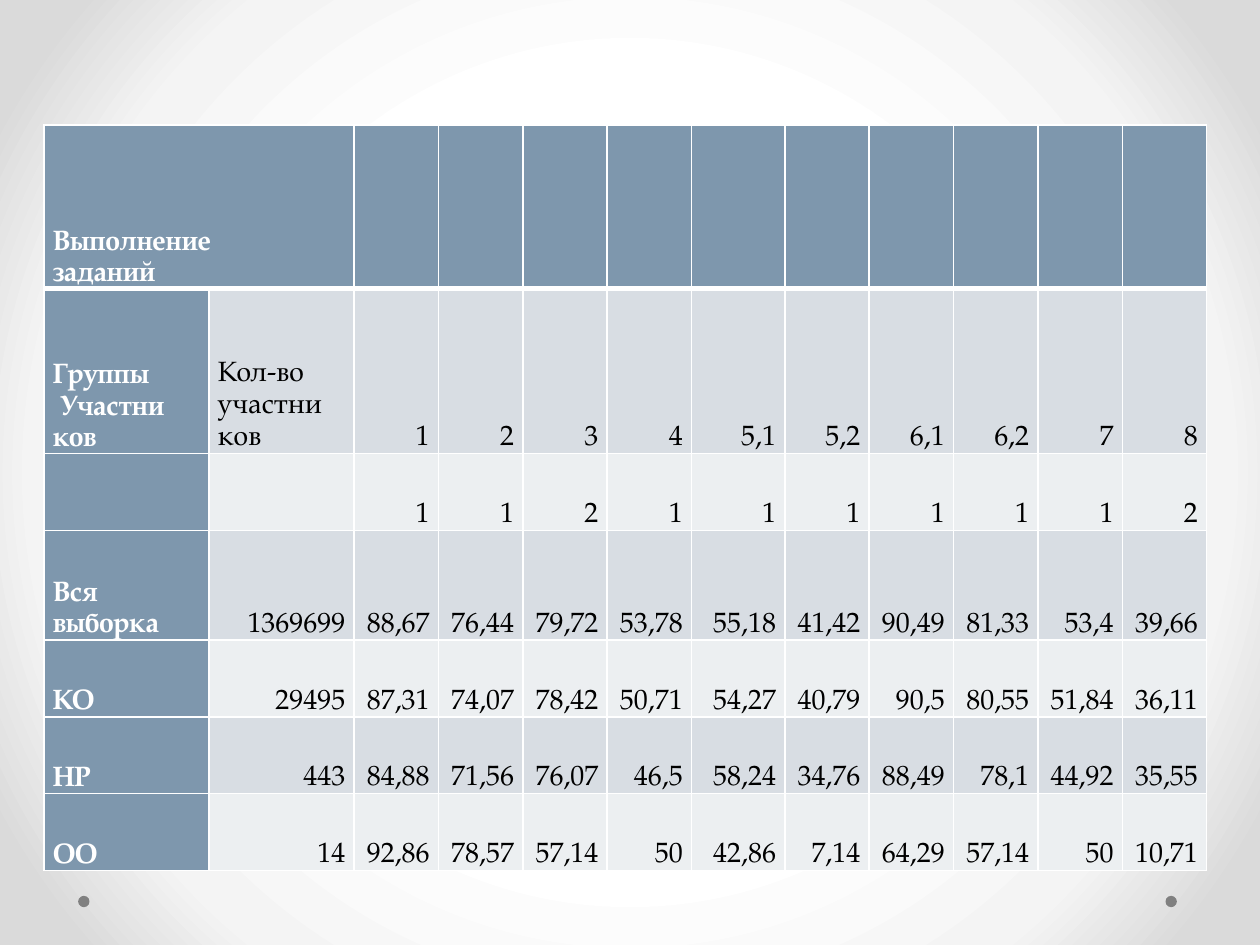
from lxml import etree
from pptx import Presentation
from pptx.dml.color import RGBColor
from pptx.enum import shapes, text
from pptx.oxml import ns
from pptx.util import Inches, Pt

FONT = "TeX Gyre Pagella"
WHITE = RGBColor(0xFF, 0xFF, 0xFF)
BLACK = RGBColor(0, 0, 0)
GREY = RGBColor(0x80, 0x80, 0x80)
SLATE = RGBColor(0x7E, 0x97, 0xAD)
BANDS = [RGBColor(0xEC, 0xEF, 0xF1), RGBColor(0xD8, 0xDD, 0xE3)]
BACKGROUND_STOPS = [
    (50, WHITE),
    (76, RGBColor(0xF4, 0xF4, 0xF4)),
    (92, RGBColor(0xDA, 0xDA, 0xDA)),
]
COLUMN_WIDTHS = [1.31, 1.15] + [0.67] * 4 + [0.74] + [0.67] * 5
ROW_HEIGHTS = [1.3, 1.31, 0.61, 0.87, 0.61, 0.61, 0.61]
ROWS = [
    ["Выполнение\nзаданий"] + [""] * 11,
    ["Группы\n Участни\nков", "Кол-во участни\nков",
     "1", "2", "3", "4", "5,1", "5,2", "6,1", "6,2", "7", "8"],
    ["", "", "1", "1", "2", "1", "1", "1", "1", "1", "1", "2"],
    ["Вся\nвыборка", "1369699", "88,67", "76,44", "79,72", "53,78",
     "55,18", "41,42", "90,49", "81,33", "53,4", "39,66"],
    ["КО", "29495", "87,31", "74,07", "78,42", "50,71",
     "54,27", "40,79", "90,5", "80,55", "51,84", "36,11"],
    ["НР", "443", "84,88", "71,56", "76,07", "46,5",
     "58,24", "34,76", "88,49", "78,1", "44,92", "35,55"],
    ["ОО", "14", "92,86", "78,57", "57,14", "50",
     "42,86", "7,14", "64,29", "57,14", "50", "10,71"],
]


def add_solid_fill(parent, color):
    """Append a solid fill to an XML element."""
    fill = etree.SubElement(parent, ns.qn("a:solidFill"))
    etree.SubElement(fill, ns.qn("a:srgbClr"), val=str(color))


def set_background(slide):
    """Give the slide a radial gradient that darkens towards the edges."""
    slide.background.fill.solid()
    properties = slide.element.find(".//" + ns.qn("p:bgPr"))
    gradient = etree.Element(ns.qn("a:gradFill"), rotWithShape="1")
    stops = etree.SubElement(gradient, ns.qn("a:gsLst"))
    for position, color in BACKGROUND_STOPS:
        stop = etree.SubElement(stops, ns.qn("a:gs"), pos=str(position * 1000))
        etree.SubElement(stop, ns.qn("a:srgbClr"), val=str(color))
    circle = etree.SubElement(gradient, ns.qn("a:path"))
    circle.set("path", "circle")
    center = dict.fromkeys("ltrb", "50000")
    etree.SubElement(circle, ns.qn("a:fillToRect"), **center)
    properties.replace(properties[0], gradient)


def write_text(frame, content, *, color, bold, align, size=16):
    """Write one paragraph per line of content in the given format."""
    frame.text = content
    for paragraph in frame.paragraphs:
        paragraph.alignment = align
        paragraph.line_spacing = 1.15
        for target in (paragraph, *paragraph.runs):
            target.font.name = FONT
            target.font.size = Pt(size)
            target.font.bold = bold
            target.font.color.rgb = color


def set_borders(cell, top, bottom):
    """Draw white borders round a cell, with widths in points."""
    properties = cell._tc.get_or_add_tcPr()
    widths = {"lnL": 1, "lnR": 1, "lnT": top, "lnB": bottom}
    for index, (tag, width) in enumerate(widths.items()):
        line = etree.Element(ns.qn("a:" + tag), w=str(Pt(width)))
        add_solid_fill(line, WHITE)
        properties.insert(index, line)


def format_cell(cell, content, row, column):
    """Fill and write a cell according to its place in the table."""
    heading = row == 0 or column == 0
    left = heading or (row == 1 and column == 1)
    cell.fill.solid()
    cell.fill.fore_color.rgb = SLATE if heading else BANDS[row % 2]
    cell.vertical_anchor = text.MSO_ANCHOR.BOTTOM
    cell.margin_left = cell.margin_right = Inches(0.07)
    cell.margin_top = cell.margin_bottom = 0
    write_text(
        cell.text_frame, content, color=WHITE if heading else BLACK, bold=heading,
        align=text.PP_ALIGN.LEFT if left else text.PP_ALIGN.RIGHT,
    )
    set_borders(cell, top=3 if row == 1 else 1, bottom=3 if row == 0 else 1)


def add_results_table(slide, left, top, width, height):
    """Add the table of task results in the given box."""
    table = slide.shapes.add_table(
        len(ROWS), len(COLUMN_WIDTHS), left, top, width, height
    ).table
    for column, column_width in zip(table.columns, COLUMN_WIDTHS):
        column.width = Inches(column_width)
    for row, row_height in zip(table.rows, ROW_HEIGHTS):
        row.height = Inches(row_height)
    for row_index, values in enumerate(ROWS):
        for column_index, value in enumerate(values):
            cell = table.cell(row_index, column_index)
            format_cell(cell, value, row_index, column_index)
    table.cell(0, 0).merge(table.cell(0, 1))


def add_footer_dots(slide, left, top, width, size):
    """Add a grey dot at each end of the footer."""
    for dot_left in (left, left + width - size):
        dot = slide.shapes.add_shape(
            shapes.MSO_SHAPE.OVAL, dot_left, top, size, size
        )
        dot.shadow.inherit = False
        dot.fill.solid()
        dot.fill.fore_color.rgb = GREY
        dot.line.fill.background()


def main():
    """Build and save the presentation."""
    presentation = Presentation()
    presentation.slide_width = Inches(10)
    presentation.slide_height = Inches(7.5)
    slide = presentation.slides.add_slide(presentation.slide_layouts[6])
    set_background(slide)
    add_footer_dots(slide, Inches(0.62), Inches(7.11), Inches(8.72), Inches(0.09))
    add_results_table(slide, Inches(0.35), Inches(0.99), Inches(9.21), Inches(5.91))
    presentation.save("out.pptx")


if __name__ == "__main__":
    main()
